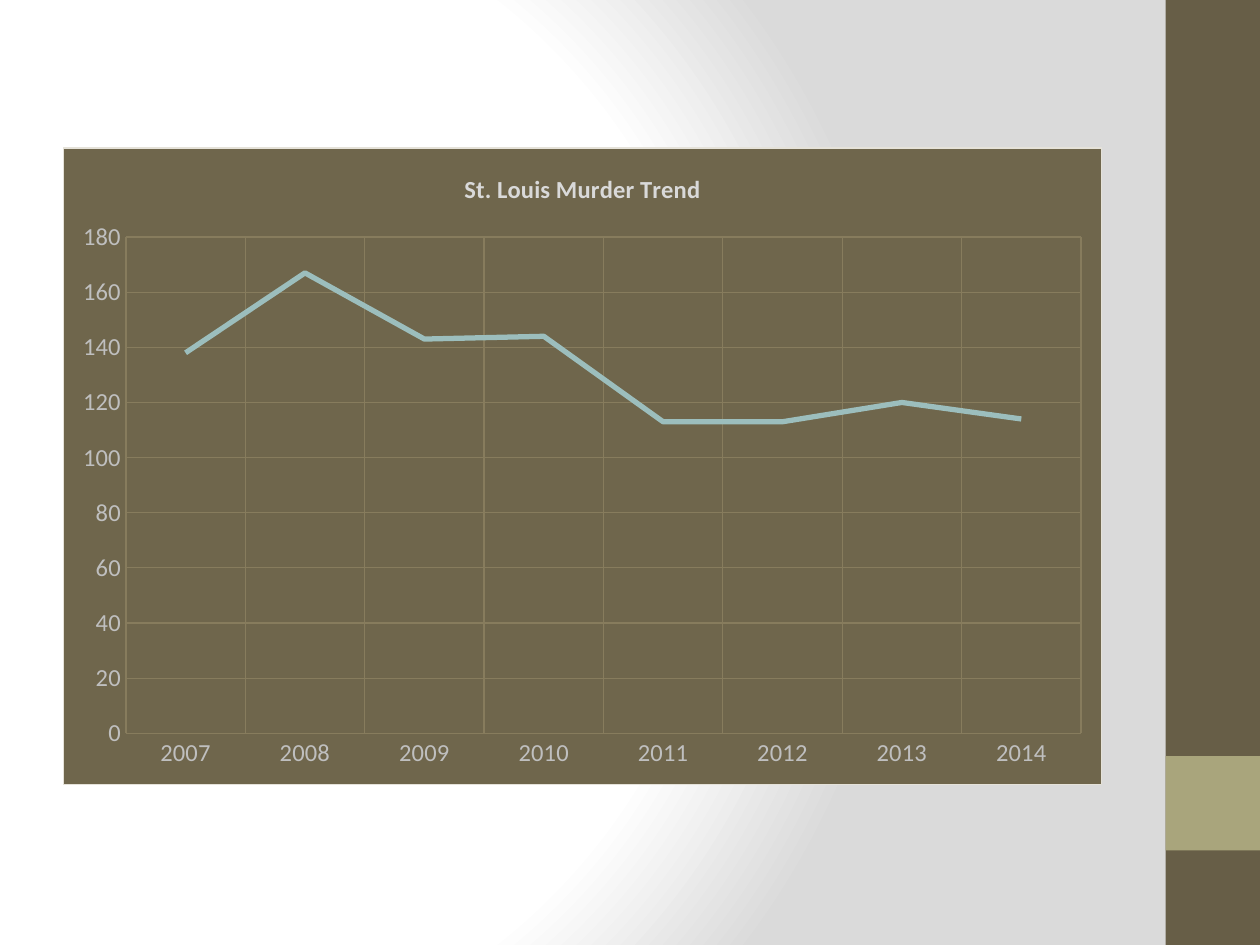
from pptx import Presentation
from pptx.chart.data import CategoryChartData
from pptx.dml.color import RGBColor
from pptx.enum.chart import XL_CHART_TYPE, XL_MARKER_STYLE, XL_TICK_MARK
from pptx.enum.shapes import MSO_SHAPE
from pptx.oxml import parse_xml
from pptx.oxml.ns import nsdecls
from pptx.util import Inches, Pt

LINE_CHART = XL_CHART_TYPE.LINE
NO_MARKER = XL_MARKER_STYLE.NONE
NO_TICK = XL_TICK_MARK.NONE
RECTANGLE = MSO_SHAPE.RECTANGLE
BLANK_LAYOUT = 6


def color(value):
    return RGBColor.from_string(value)


def format_font(font, **values):
    font.color.rgb = color(values.pop("color"))
    for name, value in values.items():
        setattr(font, name, value)


presentation = Presentation()
presentation.slide_width = Inches(10)
presentation.slide_height = Inches(7.5)
unit = presentation.slide_height / 10
slide = presentation.slides.add_slide(presentation.slide_layouts[BLANK_LAYOUT])

stops = "".join(
    f'<a:gs pos="{percent * 1000}"><a:srgbClr val="{value}"/></a:gs>'
    for percent, value in [(0, "FFFFFF"), (75, "FFFFFF"), (100, "DADADA")]
)
slide.element.cSld.insert(0, parse_xml(
    f'<p:bg {nsdecls("p", "a")}><p:bgPr><a:gradFill rotWithShape="1">'
    f'<a:gsLst>{stops}</a:gsLst><a:path path="circle">'
    '<a:fillToRect l="20000" t="50000" r="100000" b="50000"/></a:path>'
    '</a:gradFill><a:effectLst/></p:bgPr></p:bg>'
))

side_left = presentation.slide_width - unit
for top_row, rows, fill in [(0, 10, "675E47"), (8, 1, "A9A57C")]:
    band = slide.shapes.add_shape(
        RECTANGLE, int(side_left), int(top_row * unit), int(unit), int(rows * unit)
    )
    band.shadow.inherit = False
    band.fill.solid()
    band.fill.fore_color.rgb = color(fill)
    band.line.fill.background()

murders = {2007: 138, 2008: 167, 2009: 143, 2010: 144,
           2011: 113, 2012: 113, 2013: 120, 2014: 114}
chart_data = CategoryChartData()
chart_data.categories = [str(year) for year in murders]
chart_data.add_series("Series 1", murders.values())
chart = slide.shapes.add_chart(
    LINE_CHART, Inches(0.5), Inches(1.17), Inches(8.25), Inches(5.06), chart_data
).chart
chart.has_legend = False
format_font(chart.font, name="Calibri", size=Pt(10), color="2F2B20")

chart.has_title = True
title_frame = chart.chart_title.text_frame
title_frame.text = "St. Louis Murder Trend"
format_font(title_frame.paragraphs[0].runs[0].font,
            name="Calibri", size=Pt(14), bold=True, color="D9D9D9")
chart.chart_title.include_in_layout = False

for axis in (chart.category_axis, chart.value_axis):
    axis.has_major_gridlines = True
    axis.major_tick_mark = NO_TICK
    axis.minor_tick_mark = NO_TICK
    axis.format.line.fill.background()
    gridline = axis.major_gridlines.format.line
    gridline.color.rgb = color("877C5D")
    gridline.width = Pt(0.75)
    format_font(axis.tick_labels.font,
                name="Calibri", size=Pt(14), bold=False, color="BFBFBF")
chart.value_axis.minimum_scale = 0
chart.value_axis.maximum_scale = 180
chart.value_axis.major_unit = 20

plot = chart.plots[0]
plot.vary_by_categories = False
series = plot.series[0]
series.smooth = False
series.marker.style = NO_MARKER
series.format.line.color.rgb = color("9CBEBD")
series.format.line.width = Pt(3)

chart_element = chart.element.find("{*}chart")
chart_element.addnext(parse_xml(
    f'<c:spPr {nsdecls("c", "a")}>'
    '<a:solidFill><a:srgbClr val="6F664C"/></a:solidFill>'
    f'<a:ln w="{Pt(0.75)}"><a:solidFill><a:srgbClr val="E5E2D9"/></a:solidFill></a:ln>'
    '</c:spPr>'
))
plot_area = chart_element.find("{*}plotArea")
for layout in plot_area.findall("{*}layout"):
    plot_area.remove(layout)
shares = {"x": 0.06, "y": 0.14, "w": 0.92, "h": 0.78}
plot_area.insert(0, parse_xml(
    f'<c:layout {nsdecls("c")}><c:manualLayout><c:layoutTarget val="inner"/>'
    '<c:xMode val="edge"/><c:yMode val="edge"/>'
    + "".join(f'<c:{side} val="{share}"/>' for side, share in shares.items())
    + '</c:manualLayout></c:layout>'
))

presentation.save("out.pptx")
